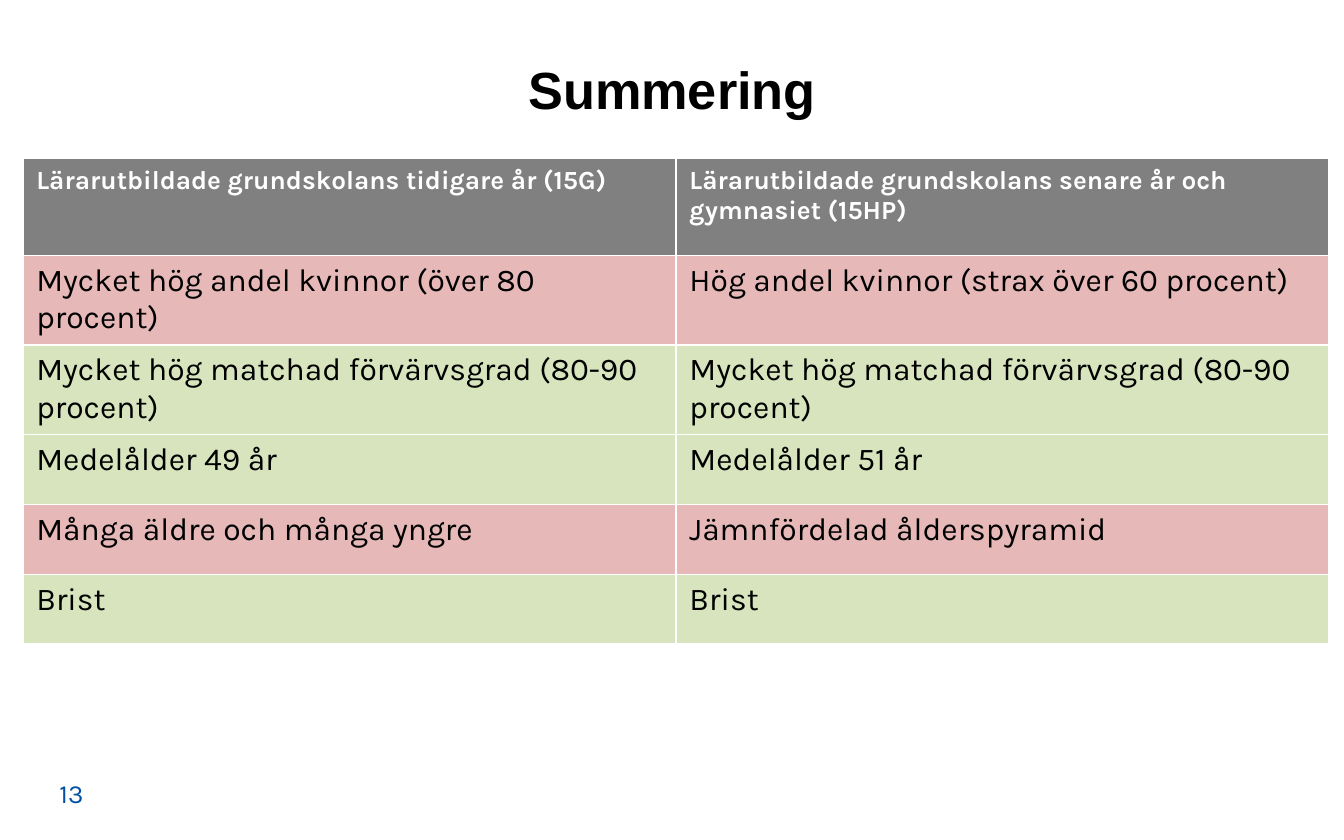
from pptx import Presentation
from pptx.dml.color import RGBColor
from pptx.enum.text import MSO_ANCHOR, PP_ALIGN
from pptx.util import Inches, Pt


def color(code):
    return RGBColor.from_string(code)


def write(frame, text, size, face, code, bold=False, align=PP_ALIGN.LEFT):
    para = frame.paragraphs[0]
    para.alignment = align
    run = para.add_run()
    run.text = text
    run.font.size = Pt(size)
    run.font.name = face
    run.font.bold = bold
    run.font.color.rgb = color(code)


GRAY, RED, GREEN = "808080", "E6B9B8", "D7E4BD"
rows = [
    (0.72, GRAY, "Lärarutbildade grundskolans tidigare år (15G)",
     "Lärarutbildade grundskolans senare år och gymnasiet (15HP)"),
    (0.52, RED, "Mycket hög andel kvinnor (över 80 procent)",
     "Hög andel kvinnor (strax över 60 procent)"),
    (0.65, GREEN, "Mycket hög matchad förvärvsgrad (80-90 procent)",
     "Mycket hög matchad förvärvsgrad (80-90 procent)"),
    (0.52, GREEN, "Medelålder 49 år", "Medelålder 51 år"),
    (0.52, RED, "Många äldre och många yngre", "Jämnfördelad ålderspyramid"),
    (0.52, GREEN, "Brist", "Brist"),
]

deck = Presentation()
deck.slide_width, deck.slide_height = Inches(10), Inches(6.25)
slide = deck.slides.add_slide(deck.slide_layouts[5])

title = slide.shapes.title
title.left, title.top = Inches(0), Inches(0)
title.width, title.height = Inches(10), Inches(1.32)
title.text_frame.vertical_anchor = MSO_ANCHOR.MIDDLE
write(title.text_frame, "Summering", 28, "Arial", "000000", True, PP_ALIGN.CENTER)

number = slide.shapes.add_textbox(Inches(0.17), Inches(5.74), Inches(0.55), Inches(0.33))
number.text_frame.word_wrap = True
number.text_frame.vertical_anchor = MSO_ANCHOR.BOTTOM
write(number.text_frame, "13", 14, "Karla", "0050A5", align=PP_ALIGN.RIGHT)

table = slide.shapes.add_table(
    len(rows), 2, Inches(0.17), Inches(1.18), Inches(9.72), Inches(3.45)).table
for r, (height, fill, *texts) in enumerate(rows):
    table.rows[r].height = Inches(height)
    head = r == 0
    for c, text in enumerate(texts):
        cell = table.cell(r, c)
        cell.fill.solid()
        cell.fill.fore_color.rgb = color(fill)
        write(cell.text_frame, text, 14 if head else 17, "Karla",
              "FFFFFF" if head else "000000", head)

deck.save("out.pptx")
